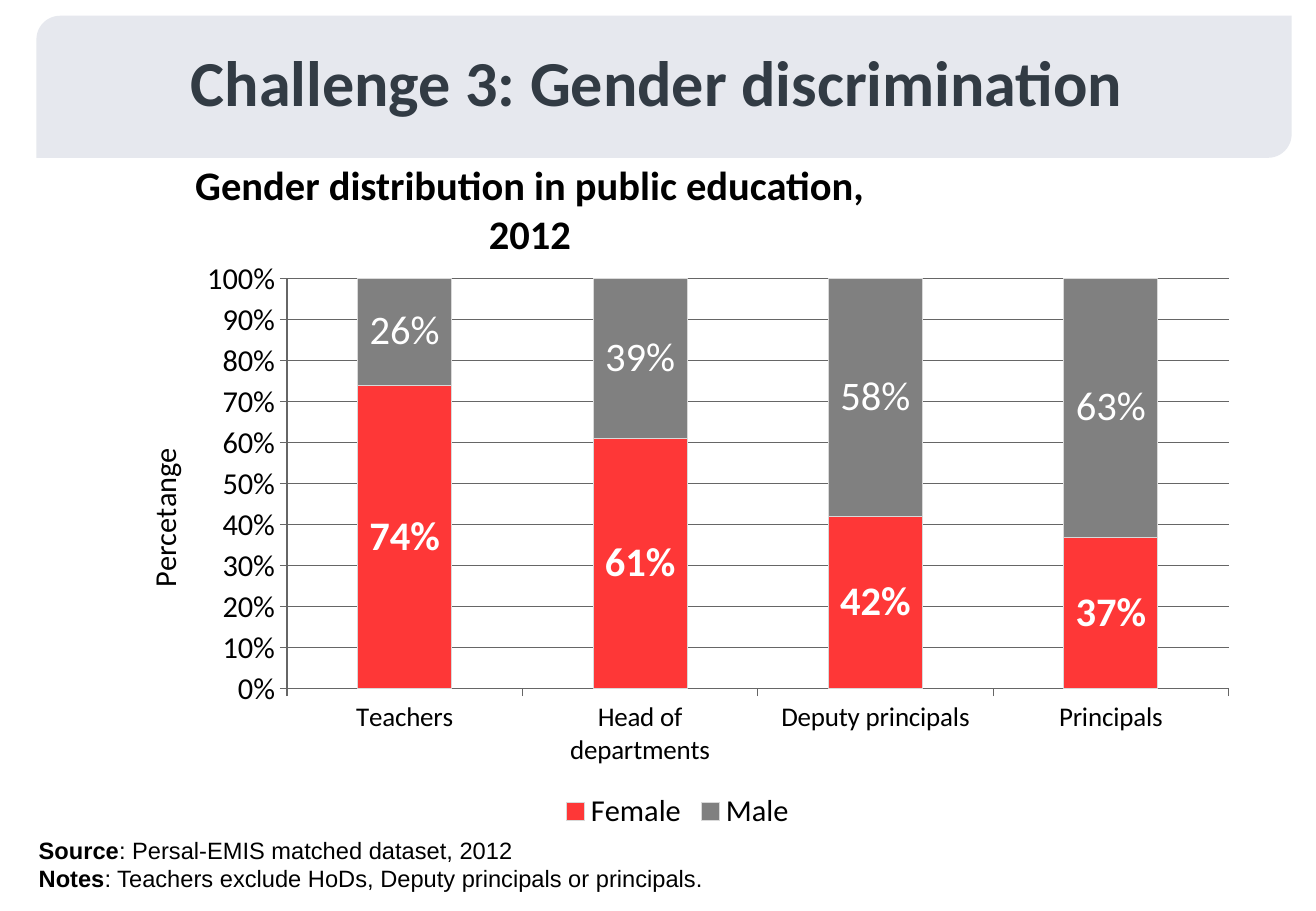
import dataclasses

import lxml.etree
import pptx
import pptx.chart.data
import pptx.dml.color
import pptx.enum.chart
import pptx.enum.shapes
import pptx.enum.text
import pptx.oxml.ns
import pptx.util

Inches = pptx.util.Inches
Pt = pptx.util.Pt
Align = pptx.enum.text.PP_ALIGN
Anchor = pptx.enum.text.MSO_ANCHOR


@dataclasses.dataclass(frozen=True)
class Theme:
    """Colours, fonts and type sizes of the slide."""

    banner: str = "E6E8EE"
    title: str = "323B44"
    ink: str = "000000"
    white: str = "FFFFFF"
    axis: str = "666666"
    edge: str = "D9D9D9"
    female: str = "FE3737"
    male: str = "808080"
    sans: str = "Calibri"
    footer_face: str = "Arial"
    chart_face: str = "Times New Roman"
    title_size: int = 38
    heading_size: int = 24
    axis_size: int = 18
    category_size: int = 16
    footer_size: int = 14


THEME = Theme()


def rgb(value):
    """Return a colour from its hex form."""
    return pptx.dml.color.RGBColor.from_string(value)


def style_font(font, name, size, color, bold=False):
    """Set family, size, colour and weight of a font."""
    font.name = name
    font.size = Pt(size)
    font.bold = bold
    font.color.rgb = rgb(color)


def style_line(line, color, width=0.75):
    """Set colour and width of a line."""
    line.color.rgb = rgb(color)
    line.width = Pt(width)


def add_text_frame(page, box, anchor):
    """Add a wrapping text box and return its frame."""
    frame = page.shapes.add_textbox(*map(Inches, box)).text_frame
    frame.word_wrap = True
    frame.vertical_anchor = anchor
    return frame


def add_heading(page, box, text, size, color, anchor):
    """Add a bold centred line of text."""
    para = add_text_frame(page, box, anchor).paragraphs[0]
    para.text = text
    para.alignment = Align.CENTER
    style_font(para.font, THEME.sans, size, color, True)


def add_banner(page, box):
    """Add the tinted banner with the slide title."""
    left, top, width, height = box
    banner = page.shapes.add_shape(
        pptx.enum.shapes.MSO_SHAPE.ROUND_2_DIAG_RECTANGLE, *map(Inches, box))
    banner.shadow.inherit = False
    banner.fill.solid()
    banner.fill.fore_color.rgb = rgb(THEME.banner)
    banner.line.fill.background()
    add_heading(page, (left + 0.23, top + 0.17, width - 0.57, height + 0.07),
                "Challenge 3: Gender discrimination",
                THEME.title_size, THEME.title, Anchor.TOP)


def add_footer(page, box):
    """Add the source and remark lines with bold lead words."""
    frame = add_text_frame(page, box, Anchor.MIDDLE)
    lines = [
        ("Source", ": Persal-EMIS matched dataset, 2012"),
        ("Notes", ": Teachers exclude HoDs, Deputy principals or principals."),
    ]
    for index, (lead, rest) in enumerate(lines):
        para = frame.add_paragraph() if index else frame.paragraphs[0]
        para.alignment = Align.JUSTIFY
        for text, bold in ((lead, True), (rest, False)):
            span = para.add_run()
            span.text = text
            style_font(span.font, THEME.footer_face, THEME.footer_size,
                       THEME.ink, bold)


def set_layout(parent, index, **settings):
    """Place a chart part by hand, in fractions of the chart."""
    qn = pptx.oxml.ns.qn
    former = parent.find(qn("c:layout"))
    if former is not None:
        parent.remove(former)
    layout = lxml.etree.Element(qn("c:layout"))
    manual = lxml.etree.SubElement(layout, qn("c:manualLayout"))
    for name, value in settings.items():
        lxml.etree.SubElement(manual, qn(f"c:{name}")).set("val", str(value))
    parent.insert(index, layout)


def style_axes(chart):
    """Format both axes, the gridlines and the value axis title."""
    outside = pptx.enum.chart.XL_TICK_MARK.OUTSIDE
    for axis, size in ((chart.category_axis, THEME.category_size),
                       (chart.value_axis, THEME.axis_size)):
        axis.major_tick_mark = outside
        style_font(axis.tick_labels.font, THEME.sans, size, THEME.ink)
        style_line(axis.format.line, THEME.axis)
    axis = chart.value_axis
    axis.minimum_scale, axis.maximum_scale, axis.major_unit = 0, 1, 0.1
    axis.tick_labels.number_format = "0%"
    axis.tick_labels.number_format_is_linked = False
    axis.has_major_gridlines = True
    style_line(axis.major_gridlines.format.line, THEME.axis)
    para = axis.axis_title.text_frame.paragraphs[0]
    para.text = "Percetange"
    style_font(para.font, THEME.sans, THEME.axis_size, THEME.ink)
    set_layout(axis.axis_title._element, 1,
               xMode="edge", yMode="edge", x=0.03, y=0.33)


def style_series(series, color, bold):
    """Colour one series and its percentage labels."""
    series.format.fill.solid()
    series.format.fill.fore_color.rgb = rgb(color)
    style_line(series.format.line, THEME.edge, 0.5)
    labels = series.data_labels
    labels.show_value = True
    labels.number_format = "0%"
    labels.number_format_is_linked = False
    style_font(labels.font, THEME.sans, THEME.heading_size, THEME.white, bold)


def add_gender_chart(page, box):
    """Add the stacked chart of women and men by post."""
    data = pptx.chart.data.CategoryChartData(number_format="0%")
    data.categories = ["Teachers", "Head of departments",
                       "Deputy principals", "Principals"]
    female = [0.74, 0.61, 0.42, 0.37]
    data.add_series("Female", female)
    data.add_series("Male", [round(1 - share, 2) for share in female])
    chart = page.shapes.add_chart(
        pptx.enum.chart.XL_CHART_TYPE.COLUMN_STACKED_100,
        *map(Inches, box), data).chart
    chart.has_title = False
    style_font(chart.font, THEME.chart_face, THEME.category_size, THEME.ink)
    chart.has_legend = True
    chart.legend.position = pptx.enum.chart.XL_LEGEND_POSITION.BOTTOM
    chart.legend.include_in_layout = False
    style_font(chart.legend.font, THEME.sans, THEME.axis_size, THEME.ink)
    plot = chart.plots[0]
    plot.gap_width = 150
    plot.overlap = 100
    plot.vary_by_categories = False
    for series, color, bold in zip(
            plot.series, (THEME.female, THEME.male), (True, False)):
        style_series(series, color, bold)
    style_axes(chart)
    plot_area = chart._chartSpace.chart.plotArea
    set_layout(plot_area, 0, layoutTarget="inner", xMode="edge", yMode="edge",
               x=0.16, y=0.05, w=0.82, h=0.7)


def main():
    """Build the slide and save the deck."""
    deck = pptx.Presentation()
    deck.slide_width = Inches(10.83)
    deck.slide_height = Inches(7.5)
    page = deck.slides.add_slide(deck.slide_layouts[6])
    add_banner(page, (0.3, 0.13, 10.33, 1.17))
    add_heading(page, (1.2, 1.47, 6.32, 0.5),
                "Gender distribution in public education, 2012",
                THEME.heading_size, THEME.ink, Anchor.MIDDLE)
    add_footer(page, (0.22, 6.83, 6.02, 0.57))
    add_gender_chart(page, (0.85, 2.05, 9.45, 4.83))
    deck.save("out.pptx")


if __name__ == "__main__":
    main()
